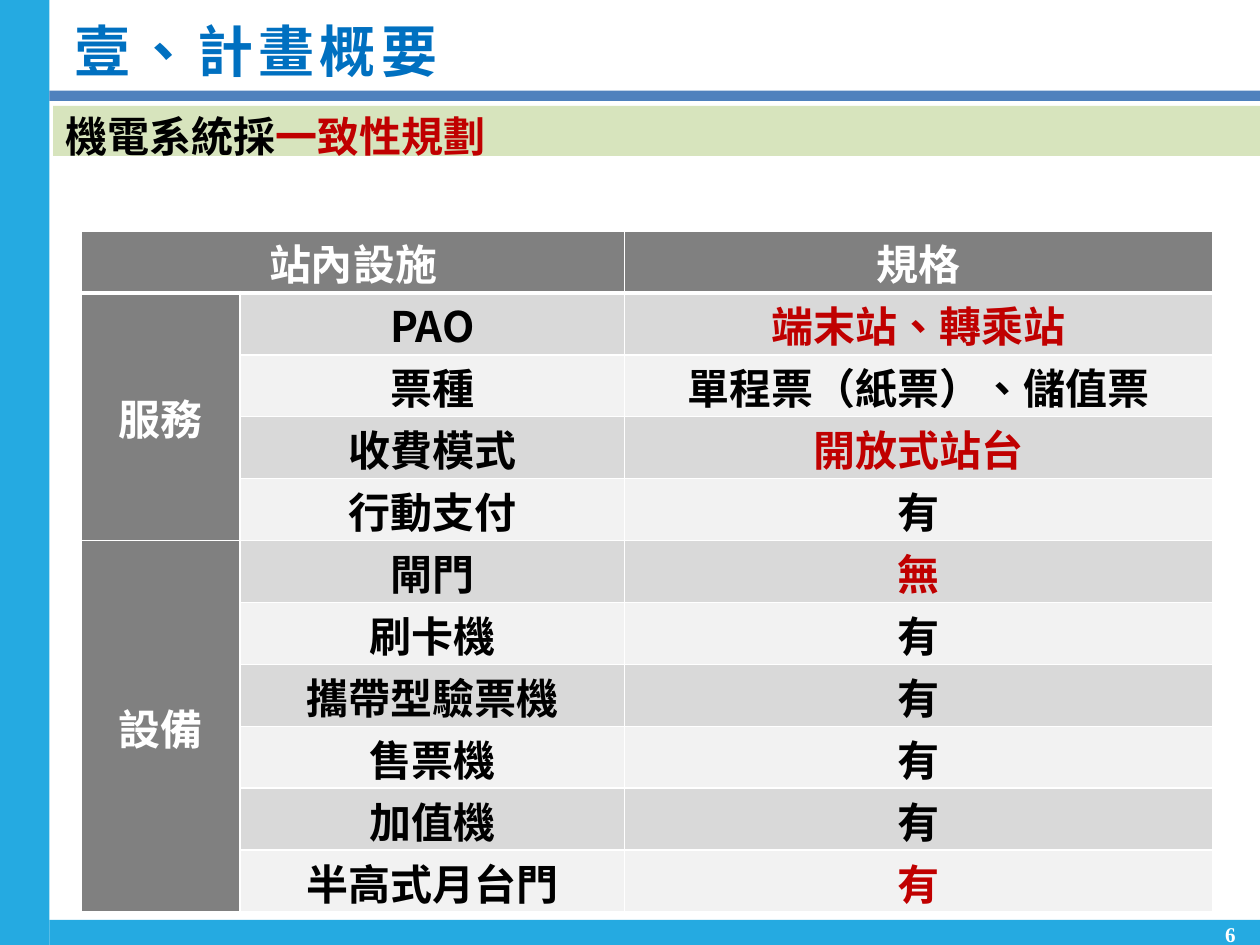
from lxml.etree import SubElement
from pptx import Presentation
from pptx.dml.color import RGBColor
from pptx.enum.shapes import MSO_SHAPE
from pptx.enum.text import MSO_ANCHOR, PP_ALIGN
from pptx.oxml.ns import qn
from pptx.util import Pt

WHITE = RGBColor(0xFF, 0xFF, 0xFF)
BLACK = RGBColor(0x00, 0x00, 0x00)
RED = RGBColor(0xC0, 0x00, 0x00)
SKY = RGBColor(0x25, 0xAA, 0xE1)
TITLE_BLUE = RGBColor(0x00, 0x70, 0xC0)
RULE_BLUE = RGBColor(0x4F, 0x81, 0xBD)
PALE_GREEN = RGBColor(0xD7, 0xE4, 0xBD)
HEADER_GRAY = RGBColor(0x80, 0x80, 0x80)
BANDS = (RGBColor(0xD9, 0xD9, 0xD9), RGBColor(0xF2, 0xF2, 0xF2))

HEADING_FONT = "Noto Sans CJK SC"
NUMBER_FONT = "Times New Roman"

HEADERS = ("站內設施", "規格")
GROUPS = (
    ("服務", (
        ("PAO", "端末站、轉乘站", RED),
        ("票種", "單程票（紙票）、儲值票", BLACK),
        ("收費模式", "開放式站台", RED),
        ("行動支付", "有", BLACK),
    )),
    ("設備", (
        ("閘門", "無", RED),
        ("刷卡機", "有", BLACK),
        ("攜帶型驗票機", "有", BLACK),
        ("售票機", "有", BLACK),
        ("加值機", "有", BLACK),
        ("半高式月台門", "有", RED),
    )),
)
COLUMN_SHARES = (1.26, 3.05, 4.67)


def format_run(run, size, color, font_name=HEADING_FONT, spacing=0):
    run.font.size = Pt(size)
    run.font.bold = True
    run.font.color.rgb = color
    run.font.name = font_name
    properties = run._r.get_or_add_rPr()
    properties.set("lang", "zh-TW")
    if spacing:
        properties.set("spc", str(spacing * 100))
    SubElement(properties, qn("a:ea")).set("typeface", font_name)


def add_bar(slide, left, top, width, height, color):
    shape = slide.shapes.add_shape(
        MSO_SHAPE.RECTANGLE, Pt(left), Pt(top), Pt(width), Pt(height))
    shape.shadow.inherit = False
    shape.fill.solid()
    shape.fill.fore_color.rgb = color
    shape.line.fill.background()
    return shape


def add_label(slide, left, top, width, height, text):
    box = slide.shapes.add_textbox(Pt(left), Pt(top), Pt(width), Pt(height))
    frame = box.text_frame
    frame.word_wrap = True
    frame.vertical_anchor = MSO_ANCHOR.MIDDLE
    frame.margin_left = frame.margin_right = 0
    frame.margin_top = frame.margin_bottom = 0
    frame.text = text
    return frame.paragraphs[0]


def add_frame(slide, width, height, side, footer):
    add_bar(slide, side, height - footer, width - side, footer, SKY)
    add_bar(slide, 0, 0, side, height, SKY)
    number = add_label(slide, width - 34, height - 12.2, 34, 11.5, "6")
    number.alignment = PP_ALIGN.CENTER
    format_run(number.runs[0], 12, WHITE, NUMBER_FONT)


def add_title(slide, left, top, width, height):
    add_bar(slide, left, top + height - 5.8, width, 5.8, RULE_BLUE)
    title = add_label(slide, left + 14.4, top, width - 28.8, height, "壹、計畫概要")
    format_run(title.runs[0], 32, TITLE_BLUE, spacing=3)


def add_subtitle(slide, left, top, width, height):
    band = add_bar(slide, left, top, width, height, PALE_GREEN)
    band.text_frame.vertical_anchor = MSO_ANCHOR.MIDDLE
    paragraph = band.text_frame.paragraphs[0]
    paragraph.alignment = PP_ALIGN.LEFT
    paragraph.line_spacing = Pt(34)
    for text, color in (("機電系統採", BLACK), ("一致性規劃", RED)):
        run = paragraph.add_run()
        run.text = text
        format_run(run, 24, color)


def style_cell(cell, fill, top=1, bottom=1):
    cell.vertical_anchor = MSO_ANCHOR.MIDDLE
    cell.margin_left = cell.margin_right = cell.margin_top = Pt(0.7)
    cell.margin_bottom = 0
    properties = cell._tc.get_or_add_tcPr()
    for side, weight in (("L", 1), ("R", 1), ("T", top), ("B", bottom)):
        line = SubElement(properties, qn(f"a:ln{side}"), w=str(Pt(weight)))
        line_fill = SubElement(line, qn("a:solidFill"))
        SubElement(line_fill, qn("a:srgbClr"), val=str(WHITE))
    cell.fill.solid()
    cell.fill.fore_color.rgb = fill


def write_cell(cell, text, color):
    cell.text_frame.text = text
    paragraph = cell.text_frame.paragraphs[0]
    paragraph.alignment = PP_ALIGN.CENTER
    format_run(paragraph.runs[0], 24, color)


def add_facility_table(slide, left, top, width, height):
    row_count = 1 + sum(len(items) for _, items in GROUPS)
    table = slide.shapes.add_table(
        row_count, 3, Pt(left), Pt(top), Pt(width), Pt(height)).table
    table.first_row = table.horz_banding = False
    for column, share in zip(table.columns, COLUMN_SHARES):
        column.width = Pt(round(width * share / sum(COLUMN_SHARES), 2))
    for row_index, row in enumerate(table.rows):
        row.height = Pt(round(height / row_count, 2))
        for column_index, cell in enumerate(row.cells):
            is_header = row_index == 0 or column_index == 0
            fill = HEADER_GRAY if is_header else BANDS[(row_index - 1) % 2]
            style_cell(cell, fill, top=3 if row_index == 1 else 1,
                       bottom=3 if row_index == 0 else 1)
    table.cell(0, 0).merge(table.cell(0, 1))
    for column_index, text in zip((0, 2), HEADERS):
        write_cell(table.cell(0, column_index), text, WHITE)
    start = 1
    for group, items in GROUPS:
        table.cell(start, 0).merge(table.cell(start + len(items) - 1, 0))
        write_cell(table.cell(start, 0), group, WHITE)
        for row_index, (facility, value, color) in enumerate(items, start):
            write_cell(table.cell(row_index, 1), facility, BLACK)
            write_cell(table.cell(row_index, 2), value, color)
        start += len(items)


def main():
    presentation = Presentation()
    presentation.slide_width = Pt(720)
    presentation.slide_height = Pt(540)
    slide = presentation.slides.add_slide(presentation.slide_layouts[6])
    add_frame(slide, 720, 540, 28.3, 14.4)
    add_title(slide, 28.3, 0, 691.7, 57.6)
    add_subtitle(slide, 30.3, 60.5, 689.7, 28.6)
    add_facility_table(slide, 46.6, 132, 646.4, 389.4)
    presentation.save("out.pptx")


if __name__ == "__main__":
    main()
